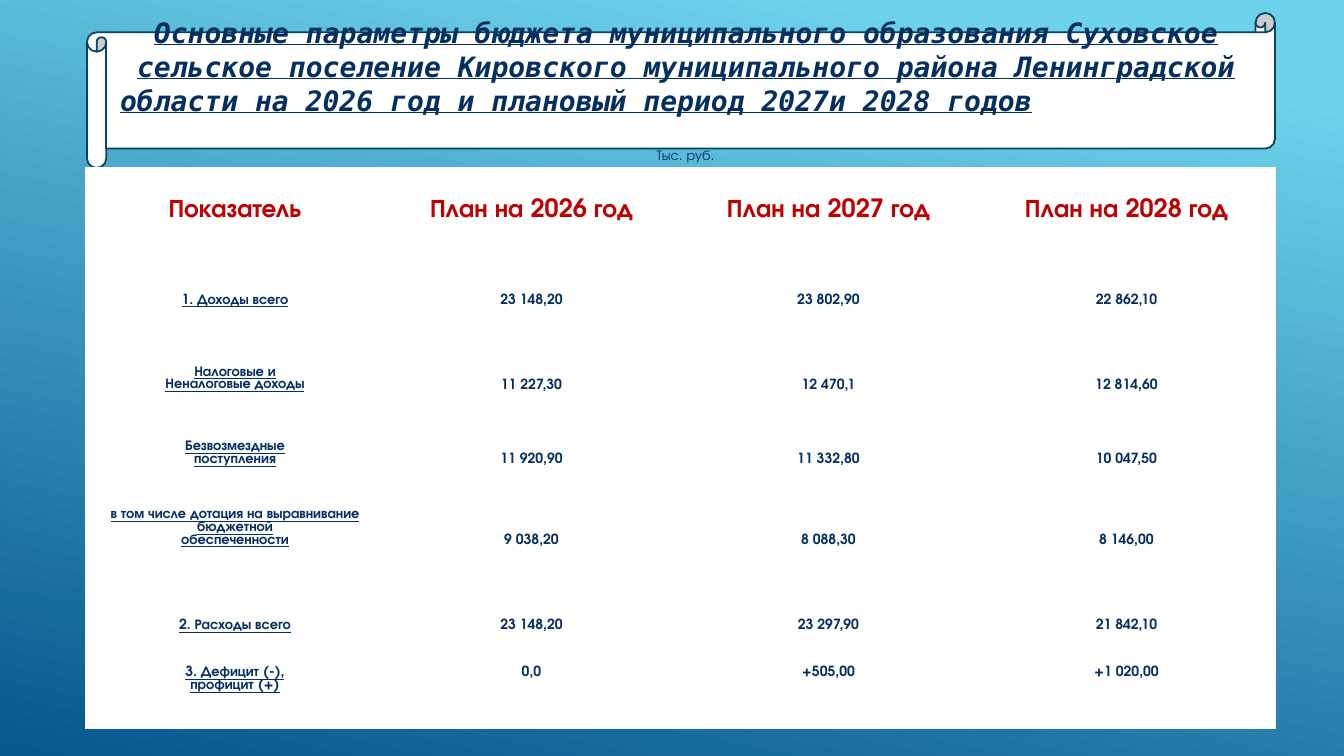
from pptx import Presentation
from pptx.dml.color import RGBColor
from pptx.enum.shapes import MSO_SHAPE
from pptx.enum.text import MSO_ANCHOR, MSO_AUTO_SIZE, PP_ALIGN
from pptx.util import Pt

PX = 9071.43
COLORS = {"navy": "052F61", "red": "C00000", "white": "FFFFFF", "outline": "054361",
          "sky": "6ED2EB", "deep": "06588E"}
BODY_FONT = "TeX Gyre Adventor"


def px(*lengths):
    return [round(length * PX) for length in lengths]


def write(frame, text, size=10, font=BODY_FONT, color="navy", bold=False, italic=False,
          underline=False, spacing=9, aligns=()):
    for index, line in enumerate(text.split("\n")):
        para = frame.paragraphs[0] if index == 0 else frame.add_paragraph()
        para.alignment = aligns[index] if aligns else PP_ALIGN.CENTER
        para.line_spacing = Pt(spacing)
        span = para.add_run()
        span.text = line
        span.font.size = Pt(size)
        span.font.name = font
        span.font.bold = bold
        span.font.italic = italic
        span.font.underline = underline
        span.font.color.rgb = RGBColor.from_string(COLORS[color])


deck = Presentation()
deck.slide_width, deck.slide_height = px(1344, 756)
page = deck.slides.add_slide(deck.slide_layouts[5])

backdrop = page.background.fill
backdrop.gradient()
backdrop.gradient_angle = 258
for stop, position, color in zip(backdrop.gradient_stops, (0.1, 1), ("sky", "deep")):
    stop.position = position
    stop.color.rgb = RGBColor.from_string(COLORS[color])

scroll = page.shapes.add_shape(MSO_SHAPE.HORIZONTAL_SCROLL, *px(87, 13, 1188, 155))
scroll.shadow.inherit = False
scroll.fill.solid()
scroll.fill.fore_color.rgb = RGBColor.from_string(COLORS["white"])
scroll.line.color.rgb = RGBColor.from_string(COLORS["outline"])
scroll.line.width = Pt(1.25)

title = page.shapes.title
scroll.element.addnext(title.element)
title.left, title.top, title.width, title.height = px(120, 15, 1132, 104)
units = page.shapes.add_textbox(*px(620, 151, 131, 16))
for box in (title, units):
    frame = box.text_frame
    frame.word_wrap = True
    frame.auto_size = MSO_AUTO_SIZE.NONE
    frame.vertical_anchor = MSO_ANCHOR.TOP
    frame.margin_left = frame.margin_right = frame.margin_top = frame.margin_bottom = 0
write(title.text_frame,
      "Основные параметры бюджета муниципального образования Суховское "
      "сельское поселение Кировского муниципального района Ленинградской\n"
      "области на 2026 год и плановый период 2027и 2028 годов",
      size=20, font="DejaVu Sans Mono", bold=True, italic=True, underline=True,
      spacing=24.3, aligns=(PP_ALIGN.CENTER, PP_ALIGN.LEFT))
write(units.text_frame, "Тыс. руб.")

COLUMN_WIDTHS = [298, 295, 299, 297]
ROW_HEIGHTS = [108, 72, 88, 68, 111, 47, 67]
ROWS = [
    ("Показатель", "План на 2026 год", "План на 2027 год", "План на 2028 год"),
    ("1. Доходы всего", "23 148,20", "23 802,90", "22 862,10"),
    ("Налоговые и\nНеналоговые доходы", "11 227,30", "12 470,1", "12 814,60"),
    ("Безвозмездные\nпоступления", "11 920,90", "11 332,80", "10 047,50"),
    ("в том числе дотация на выравнивание бюджетной\nобеспеченности",
     "9 038,20", "8 088,30", "8 146,00"),
    ("2. Расходы всего", "23 148,20", "23 297,90", "21 842,10"),
    ("3. Дефицит (-),\nпрофицит (+)", "0,0", "+505,00", "+1 020,00"),
]
LABEL_TOPS = [32, 18, 18, 5, 5, 5, 5]
VALUE_TOPS = [32, 18, 31, 18, 31, 5, 5]

table = page.shapes.add_table(len(ROWS), len(COLUMN_WIDTHS),
                              *px(86, 168, sum(COLUMN_WIDTHS), sum(ROW_HEIGHTS))).table
for column, width in zip(table.columns, px(*COLUMN_WIDTHS)):
    column.width = width
for row, height in zip(table.rows, px(*ROW_HEIGHTS)):
    row.height = height

for row_index, texts in enumerate(ROWS):
    for column_index, text in enumerate(texts):
        cell = table.cell(row_index, column_index)
        cell.fill.solid()
        cell.fill.fore_color.rgb = RGBColor.from_string(COLORS["white"])
        tops = VALUE_TOPS if column_index else LABEL_TOPS
        cell.margin_top, cell.margin_bottom = px(tops[row_index], 5)
        if row_index == 0:
            write(cell.text_frame, text, size=18, color="red", bold=True, spacing=16)
        else:
            write(cell.text_frame, text, bold=True, underline=column_index == 0)

deck.save("out.pptx")
